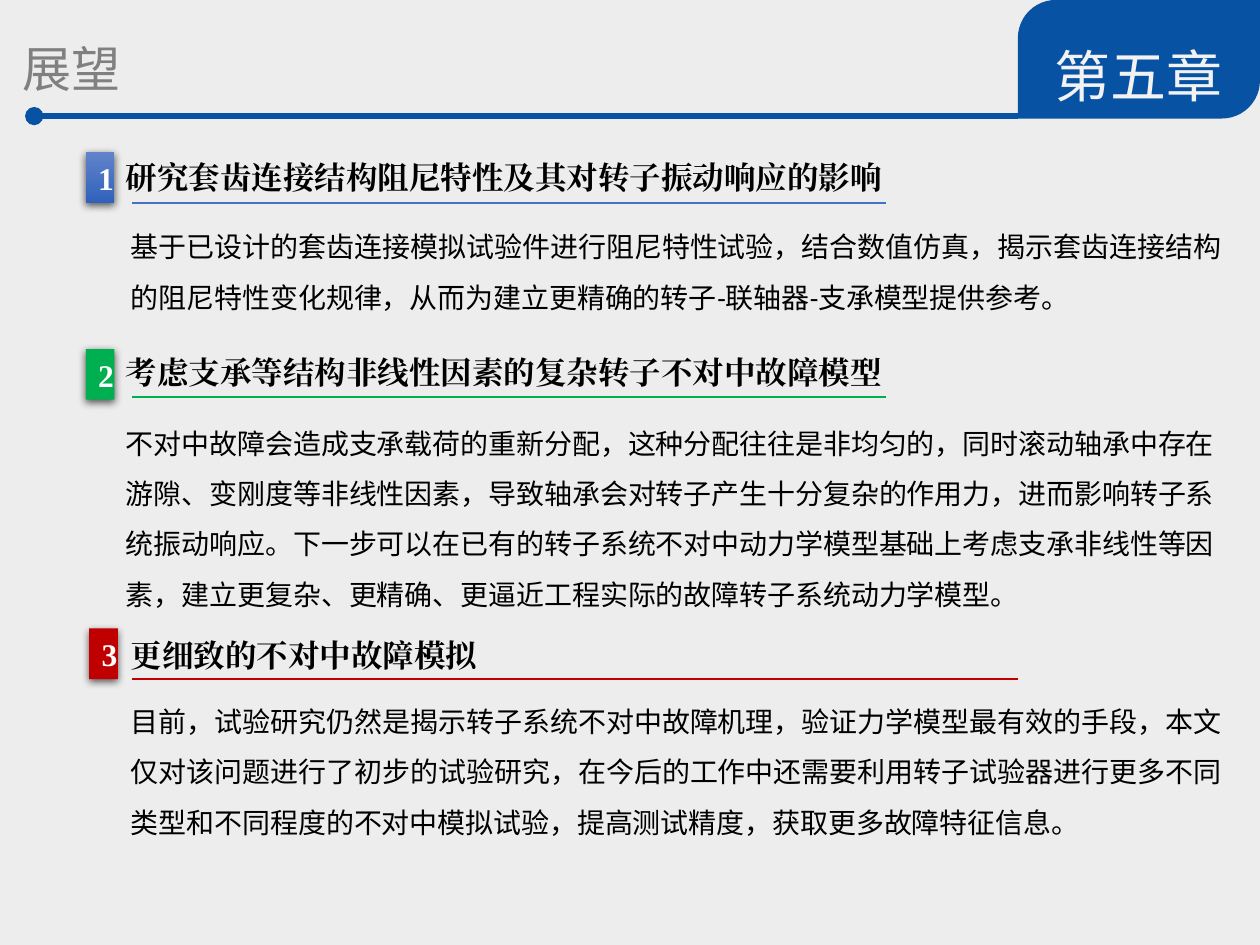
from lxml import etree
from pptx import Presentation
from pptx.dml.color import RGBColor
from pptx.enum.shapes import MSO_CONNECTOR, MSO_SHAPE
from pptx.enum.text import MSO_ANCHOR, PP_ALIGN
from pptx.oxml.ns import qn
from pptx.util import Cm, Pt

LEFT, CENTER, JUSTIFY = PP_ALIGN.LEFT, PP_ALIGN.CENTER, PP_ALIGN.JUSTIFY
MIDDLE = MSO_ANCHOR.MIDDLE
RECTANGLE = MSO_SHAPE.RECTANGLE
TAB_SHAPE = MSO_SHAPE.ROUND_2_DIAG_RECTANGLE
STRAIGHT = MSO_CONNECTOR.STRAIGHT

HEADING_FONT, BODY_FONT, TITLE_FONT = "Times New Roman", "Calibri", "Noto Sans CJK SC"
NAVY, BLACK, WHITE = "0852A4", "000000", "FFFFFF"
BLUE_GRADIENT = ("6183CB", "3062BB")
BODY_WIDTH = 22.5

# Each position is (left, top) in centimetres.
SECTIONS = [
    dict(number="1", badge=(1.73, 3.07), fill=BLUE_GRADIENT,
         heading="研究套齿连接结构阻尼特性及其对转子振动响应的影响",
         heading_at=(2.29, 3.07), heading_width=15.93,
         rule_color="4472C4", rule_y=4.09, rule_end=17.86,
         body="基于已设计的套齿连接模拟试验件进行阻尼特性试验，结合数值仿真，揭示套齿连接结构"
              "的阻尼特性变化规律，从而为建立更精确的转子-联轴器-支承模型提供参考。",
         body_at=(2.39, 4.17), body_height=2.31, align=JUSTIFY),
    dict(number="2", badge=(1.73, 7.04), fill="00B050",
         heading="考虑支承等结构非线性因素的复杂转子不对中故障模型",
         heading_at=(2.29, 6.99), heading_width=17.4,
         rule_color="00B050", rule_y=8, rule_end=17.86,
         body="不对中故障会造成支承载荷的重新分配，这种分配往往是非均匀的，同时滚动轴承中存在"
              "游隙、变刚度等非线性因素，导致轴承会对转子产生十分复杂的作用力，进而影响转子系"
              "统振动响应。下一步可以在已有的转子系统不对中动力学模型基础上考虑支承非线性等因"
              "素，建立更复杂、更精确、更逼近工程实际的故障转子系统动力学模型。",
         body_at=(2.29, 8.13), body_height=4.37, align=LEFT),
    dict(number="3", badge=(1.8, 12.67), fill="C00000",
         heading="更细致的不对中故障模拟",
         heading_at=(2.39, 12.7), heading_width=7.95,
         rule_color="C00000", rule_y=13.69, rule_end=20.52,
         body="目前，试验研究仍然是揭示转子系统不对中故障机理，验证力学模型最有效的手段，本文"
              "仅对该问题进行了初步的试验研究，在今后的工作中还需要利用转子试验器进行更多不同"
              "类型和不同程度的不对中模拟试验，提高测试精度，获取更多故障特征信息。",
         body_at=(2.39, 13.74), body_height=3.33, align=JUSTIFY),
]


def rgb(hex_color):
    return RGBColor.from_string(hex_color)


def write(frame, text, size, font, color, bold=False, align=LEFT, spacing=None, after=None):
    frame.word_wrap = True
    frame.text = text
    paragraph = frame.paragraphs[0]
    paragraph.alignment = align
    paragraph.line_spacing = spacing
    paragraph.space_after = after
    run = paragraph.runs[0]
    run.font.size = Pt(size)
    run.font.bold = bold
    run.font.name = font
    run.font.color.rgb = rgb(color)
    east_asian = etree.SubElement(run.font._element, qn("a:ea"))
    east_asian.set("typeface", font)


def add_text(slide, left, top, width, height, text, *style, **options):
    box = slide.shapes.add_textbox(Cm(left), Cm(top), Cm(width), Cm(height))
    write(box.text_frame, text, *style, **options)
    return box.text_frame


def add_line(slide, left, y, right, color, width, dot=False):
    """Draw a horizontal line, with a round start if dot is set."""
    line = slide.shapes.add_connector(STRAIGHT, Cm(left), Cm(y), Cm(right), Cm(y))
    line.line.color.rgb = rgb(color)
    line.line.width = Pt(width)
    if dot:
        etree.SubElement(line.line._get_or_add_ln(), qn("a:headEnd"), type="oval")
    etree.SubElement(line._element.spPr, qn("a:effectLst"))


def add_shape(slide, kind, left, top, width, height, fill):
    """Add a borderless shape; a pair of colours gives a vertical gradient."""
    shape = slide.shapes.add_shape(kind, Cm(left), Cm(top), Cm(width), Cm(height))
    shape.shadow.inherit = False
    shape.line.fill.background()
    if isinstance(fill, tuple):
        shape.fill.gradient()
        shape.fill.gradient_angle = 270
        for stop, color in zip(shape.fill.gradient_stops, fill):
            stop.color.rgb = rgb(color)
    else:
        shape.fill.solid()
        shape.fill.fore_color.rgb = rgb(fill)
    return shape


def add_badge(slide, number, left, top, fill):
    badge = add_shape(slide, RECTANGLE, left, top, 0.58, 1.02, fill)
    effects = badge._element.spPr.find(qn("a:effectLst"))
    shadow = etree.SubElement(effects, qn("a:outerShdw"), blurRad=str(Pt(4.5)),
                              dist=str(Pt(1.5)), dir="5400000", rotWithShape="0")
    shade = etree.SubElement(shadow, qn("a:srgbClr"), val=BLACK)
    etree.SubElement(shade, qn("a:alpha"), val="63000")
    badge.text_frame.vertical_anchor = MIDDLE
    write(badge.text_frame, number, 18, HEADING_FONT, WHITE, bold=True, align=CENTER)


def add_header(slide, title, chapter):
    add_line(slide, 0.69, 2.34, 20.52, NAVY, 3.5, dot=True)
    tab = add_shape(slide, TAB_SHAPE, 20.52, 0, 4.88, 2.39, NAVY)
    tab.adjustments[0] = 0.32
    tab.adjustments[1] = 0
    add_text(slide, 20.52, 0.03, 4.88, 1.98, chapter, 32, TITLE_FONT, "F2F2F2",
             align=CENTER, spacing=1.5, after=Pt(6))
    title_frame = add_text(slide, 0, 0.05, 20.52, 1.78, title, 28, TITLE_FONT, "808080",
                           spacing=1.5, after=Pt(6))
    title_frame.margin_left = Cm(0.45)


def add_section(slide, section):
    add_badge(slide, section["number"], *section["badge"], section["fill"])
    add_text(slide, *section["heading_at"], section["heading_width"], 1.02,
             section["heading"], 18, HEADING_FONT, BLACK, bold=True)
    add_line(slide, 2.67, section["rule_y"], section["rule_end"], section["rule_color"], 1)
    add_text(slide, *section["body_at"], BODY_WIDTH, section["body_height"],
             section["body"], 16, BODY_FONT, BLACK, align=section["align"], spacing=1.5)


def main():
    deck = Presentation()
    deck.slide_width, deck.slide_height = Cm(25.4), Cm(19.05)
    slide = deck.slides.add_slide(deck.slide_layouts[6])
    slide.background.fill.solid()
    slide.background.fill.fore_color.rgb = rgb("EDEDED")
    add_header(slide, "展望", "第五章")
    for section in SECTIONS:
        add_section(slide, section)
    deck.save("out.pptx")


if __name__ == "__main__":
    main()
